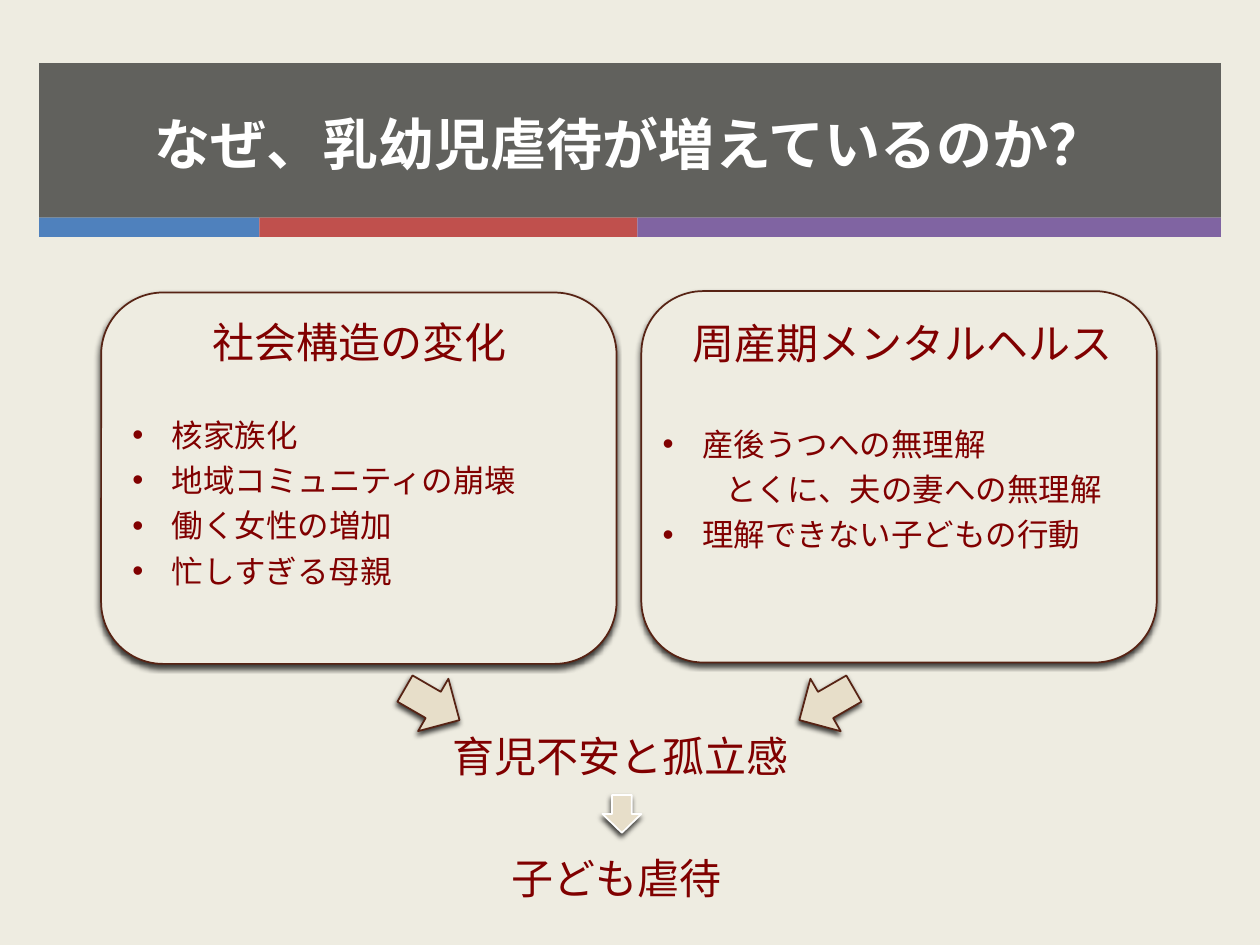
from lxml import etree
from pptx import Presentation
from pptx.dml.color import RGBColor
from pptx.enum.shapes import MSO_SHAPE
from pptx.enum.text import MSO_ANCHOR, MSO_AUTO_SIZE, PP_ALIGN
from pptx.oxml.ns import qn
from pptx.util import Pt

RECTANGLE, ROUNDED = MSO_SHAPE.RECTANGLE, MSO_SHAPE.ROUNDED_RECTANGLE
RIGHT_ARROW, LEFT_ARROW = MSO_SHAPE.RIGHT_ARROW, MSO_SHAPE.LEFT_ARROW
DOWN_ARROW = MSO_SHAPE.DOWN_ARROW
TOP, MIDDLE = MSO_ANCHOR.TOP, MSO_ANCHOR.MIDDLE
LEFT, CENTER = PP_ALIGN.LEFT, PP_ALIGN.CENTER
NO_AUTOFIT = MSO_AUTO_SIZE.NONE

CREAM, MAROON, BROWN = "EEECE1", "800000", "572314"
SAND, WHITE, CHARCOAL = "E7DEC9", "FFFFFF", "262626"
HANG = 22.5


def color(hex_text):
    return RGBColor.from_string(hex_text)


def place(shape, box):
    shape.left, shape.top, shape.width, shape.height = map(Pt, box)


def add_alpha(color_element, percent):
    etree.SubElement(color_element, qn("a:alpha"), val=str(percent * 1000))


def add_shadow(shape):
    effects = shape.element.spPr.find(qn("a:effectLst"))
    shadow = etree.SubElement(
        effects, qn("a:outerShdw"), blurRad=str(Pt(3)), dist=str(Pt(2)),
        dir=str(110 * 60000), algn="tl", rotWithShape="0")
    add_alpha(etree.SubElement(shadow, qn("a:srgbClr"), val="000000"), 75)


def add_shape(page, kind, box, fill, line=None, rotation=0):
    """Add a filled shape; an outlined one also casts a shadow."""
    shape = page.shapes.add_shape(kind, *map(Pt, box))
    shape.rotation = rotation
    shape.shadow.inherit = False
    shape.fill.solid()
    shape.fill.fore_color.rgb = color(fill)
    if line:
        shape.line.color.rgb = color(line)
        shape.line.width = Pt(1)
        add_shadow(shape)
    else:
        shape.line.fill.background()
    return shape


def write_text(shape, lines, size=24, font="Calibri", ink=MAROON, bold=False,
               align=CENTER, anchor=TOP, spacing=1.0):
    frame = shape.text_frame
    frame.word_wrap = True
    frame.auto_size = NO_AUTOFIT
    frame.vertical_anchor = anchor
    for index, line in enumerate(lines):
        para = frame.add_paragraph() if index else frame.paragraphs[0]
        para.alignment = align
        para.line_spacing = spacing
        para.space_before = Pt(0)
        span = para.add_run()
        span.text = line
        span.font.size = Pt(size)
        span.font.name = font
        span.font.bold = bold
        span.font.color.rgb = color(ink)


def add_label(page, box, text, **text_format):
    write_text(page.shapes.add_textbox(*map(Pt, box)), [text], **text_format)


def bring_to_front(shape):
    shape.element.getparent().append(shape.element)


def set_indent(para, margin, first_line, bullet):
    """Set the indent, with a bullet or without one."""
    properties = para._p.get_or_add_pPr()
    properties.set("marL", str(Pt(margin)))
    properties.set("indent", str(Pt(first_line)))
    if bullet:
        etree.SubElement(properties, qn("a:buFont"), typeface="Arial")
        etree.SubElement(properties, qn("a:buChar"), char="•")
    else:
        etree.SubElement(properties, qn("a:buNone"))


def build_header(page, box, title):
    left, top, width, height = box
    stripe_height = 11
    band_height = height - stripe_height

    # Translucent band
    band = add_shape(page, RECTANGLE, (left, top, width, band_height), CHARCOAL)
    add_alpha(band.element.spPr.find(qn("a:solidFill"))[0], 70)

    # Three-colour stripe
    stripe_left = left
    for stripe_width, fill in ((126, "4F81BD"), (216, "C0504D"), (333.4, "8064A2")):
        add_shape(page, RECTANGLE, (stripe_left, top + band_height,
                                    stripe_width, stripe_height), fill)
        stripe_left += stripe_width

    # Title
    heading = page.shapes.title
    place(heading, (left, top + 3.6, width, 76.3))
    write_text(heading, [title], size=32, font="Arial", ink=WHITE, bold=True,
               anchor=MIDDLE, spacing=1.2)
    bring_to_front(heading)


def build_panel(page, box, heading, heading_box, body, body_box, lines,
                sublines=(), font="Calibri", **heading_format):
    """Build a card; heading_box and body_box are relative to its corner."""
    left, top = box[:2]
    add_shape(page, ROUNDED, box, CREAM, BROWN)

    def within(inner):
        return (left + inner[0], top + inner[1], *inner[2:])

    add_label(page, within(heading_box), heading, **heading_format)

    # List
    place(body, within(body_box))
    write_text(body, lines, size=18, font=font, align=LEFT, spacing=1.2)
    for para in body.text_frame.paragraphs:
        if para.text in sublines:
            set_indent(para, 36, 0, bullet=False)
        else:
            set_indent(para, HANG, -HANG, bullet=True)
    bring_to_front(body)


def build_outcome(page, box):
    """Build the arrows and the two results below the cards."""
    left, top, width, height = box

    # Arrows from the cards
    arrow_width, arrow_height = 36, 34.6
    add_shape(page, RIGHT_ARROW, (left, top, arrow_width, arrow_height),
              SAND, BROWN, rotation=30)
    add_shape(page, LEFT_ARROW, (left + width - arrow_width, top,
                                 arrow_width, arrow_height),
              SAND, BROWN, rotation=-30)

    # Results and the arrow between them
    add_label(page, (left - 18, top + 28.8, 286.6, 36), "育児不安と孤立感")
    add_shape(page, DOWN_ARROW, (left + 115.2, top + 69.1, 22.3, 21.6),
              SAND, WHITE)
    add_label(page, (left + 2.9, top + height - 36, 240.5, 36), "子ども虐待")


def main():
    deck = Presentation()
    deck.slide_width, deck.slide_height = Pt(720), Pt(540)
    page = deck.slides.add_slide(deck.slide_layouts[3])
    page.background.fill.solid()
    page.background.fill.fore_color.rgb = color(CREAM)
    left_body, right_body = page.placeholders[1], page.placeholders[2]

    build_header(page, (22.3, 36, 675.4, 99.4), "なぜ、乳幼児虐待が増えているのか？")
    build_panel(
        page, (57.8, 167.2, 294.5, 212.2),
        "社会構造の変化", (35.8, 9.9, 223.2, 36),
        left_body, (10.6, 62.5, 260, 111),
        ["核家族化", "地域コミュニティの崩壊", "働く女性の増加", "忙しすぎる母親"],
        anchor=MIDDLE)
    subline = "とくに、夫の妻への無理解"
    build_panel(
        page, (366.5, 166.4, 294.5, 212.2),
        "周産期メンタルヘルス", (19.4, 5.7, 260, 41),
        right_body, (5, 68.3, 274.3, 85),
        ["産後うつへの無理解", subline, "理解できない子どもの行動"],
        sublines=[subline], font="Arial", spacing=1.2)
    build_outcome(page, (229, 385.2, 261.4, 134.6))

    deck.save("out.pptx")


if __name__ == "__main__":
    main()
